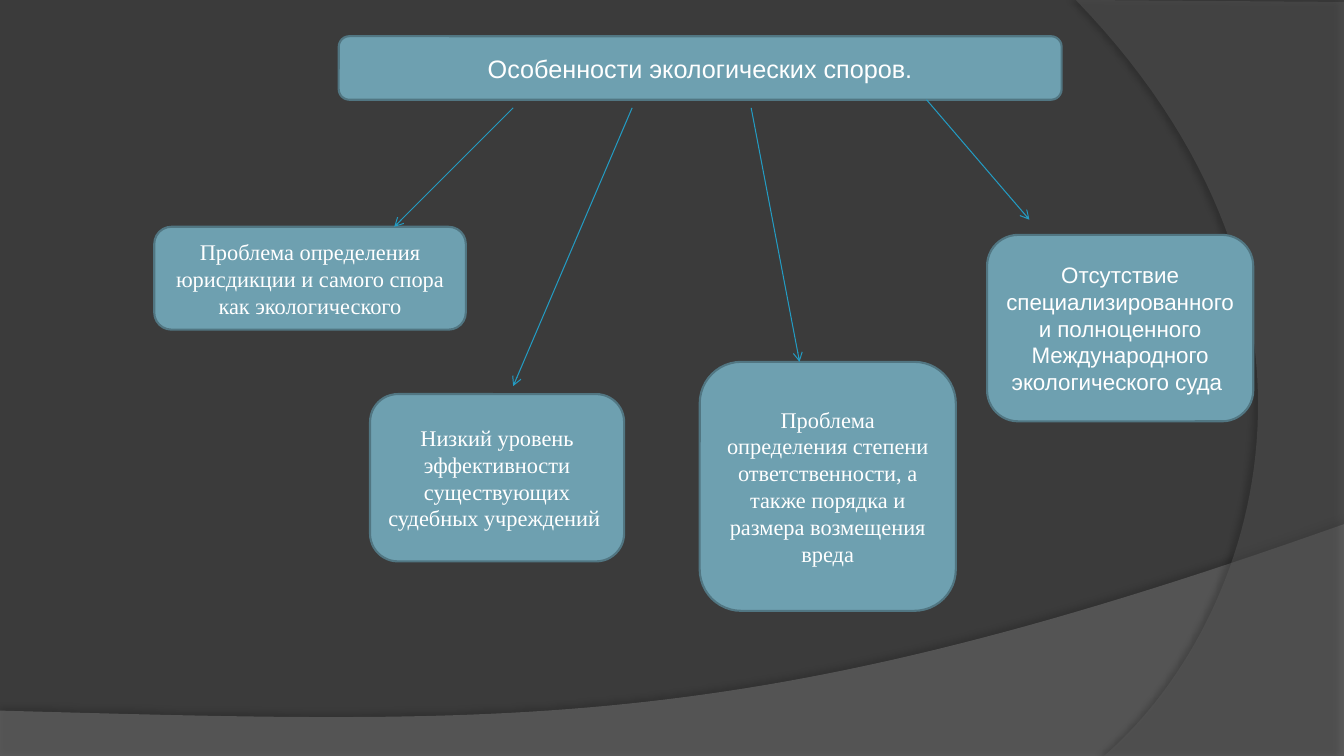
"""Build a slide on the features of environmental disputes."""
from dataclasses import dataclass

from lxml.etree import SubElement
from pptx import Presentation
from pptx.dml.color import RGBColor
from pptx.enum.shapes import MSO_CONNECTOR, MSO_SHAPE
from pptx.enum.text import MSO_ANCHOR, PP_ALIGN
from pptx.oxml.ns import qn
from pptx.util import Inches, Pt


@dataclass(frozen=True)
class Theme:
    background: str = "3B3B3B"
    wave: str = "7F7F7F"
    arc: str = "5E5E5E"
    shadow: str = "000000"
    box: str = "6EA0B0"
    border: str = "517682"
    arrow: str = "239BC2"
    text: str = "FFFFFF"
    sans: str = "Arial"
    serif: str = "Times New Roman"
    title_size: int = 18
    body_size: int = 16


def curve(p0, p1, p2, p3, steps=60):
    """Return points along a cubic Bezier curve."""
    points = []
    for i in range(steps + 1):
        t = i / steps
        u = 1 - t
        points.append(tuple(
            u**3 * a + 3 * u**2 * t * b + 3 * u * t**2 * c + t**3 * d
            for a, b, c, d in zip(p0, p1, p2, p3)
        ))
    return points


theme = Theme()
prs = Presentation()
prs.slide_width, prs.slide_height = Inches(13.33), Inches(7.5)
s = prs.slides.add_slide(prs.slide_layouts[6])
s.background.fill.solid()
s.background.fill.fore_color.rgb = RGBColor.from_string(theme.background)

wave = [(0, 7.05), (0, 7.51), (13.33, 7.51)]
wave += curve((13.33, 5.2), (7.45, 7.29), (5.21, 7.19), (0, 7.05))
arc = [(13.33, 0.02), (13.33, 7.5)]
arc += curve((10.95, 7.5), (12.46, 6.19), (13.57, 3), (10.67, 0))

for outline, color, opacity, shade, distance, angle in [
    (wave, theme.wave, 45, 35, 3.5, 270),
    (arc, theme.arc, 40, 45, 4, 180),
]:
    points = [(Inches(x), Inches(y)) for x, y in outline]
    builder = s.shapes.build_freeform(*points[0])
    builder.add_line_segments(points[1:], close=True)
    sp = builder.convert_to_shape()
    sp.fill.solid()
    sp.fill.fore_color.rgb = RGBColor.from_string(color)
    fill = sp.fill._xPr.find(qn("a:solidFill"))
    SubElement(fill[0], qn("a:alpha"), val=str(opacity * 1000))
    sp.line.fill.background()
    sp.shadow.inherit = False
    effects = sp._element.spPr.find(qn("a:effectLst"))
    shadow = SubElement(effects, qn("a:outerShdw"), blurRad=str(Pt(4)),
                        dist=str(Pt(distance)), dir=str(angle * 60000),
                        algn="ctr", rotWithShape="0")
    tint = SubElement(shadow, qn("a:srgbClr"), val=theme.shadow)
    SubElement(tint, qn("a:alpha"), val=str(shade * 1000))

boxes = [
    ((3.36, 0.36, 7.17, 0.63), theme.sans, theme.title_size,
     "Особенности экологических споров."),
    ((1.53, 2.25, 3.09, 1.02), theme.serif, theme.body_size,
     "Проблема определения юрисдикции и самого спора как экологического"),
    ((3.67, 3.91, 2.52, 1.66), theme.serif, theme.body_size,
     "Низкий уровень эффективности существующих судебных учреждений "),
    ((9.79, 2.33, 2.64, 1.85), theme.sans, theme.body_size,
     "Отсутствие специализированного и полноценного Международного "
     "экологического суда "),
    ((6.94, 3.59, 2.54, 2.47), theme.serif, theme.body_size,
     "Проблема определения степени ответственности, а также порядка "
     "и размера возмещения вреда"),
]
for place, font, size, text in boxes:
    sp = s.shapes.add_shape(MSO_SHAPE.ROUNDED_RECTANGLE, *map(Inches, place))
    sp.shadow.inherit = False
    sp.fill.solid()
    sp.fill.fore_color.rgb = RGBColor.from_string(theme.box)
    sp.line.color.rgb = RGBColor.from_string(theme.border)
    sp.line.width = Pt(1.5)
    tf = sp.text_frame
    tf.word_wrap = True
    tf.vertical_anchor = MSO_ANCHOR.MIDDLE
    p = tf.paragraphs[0]
    p.alignment = PP_ALIGN.CENTER
    r = p.add_run()
    r.text = text
    r.font.name = font
    r.font.size = Pt(size)
    r.font.color.rgb = RGBColor.from_string(theme.text)

arrows = [
    (5.09, 1.07, 3.91, 2.25),
    (6.27, 1.07, 5.09, 3.83),
    (9.19, 0.99, 10.21, 2.18),
    (7.45, 1.07, 7.93, 3.59),
]
for ends in arrows:
    arrow = s.shapes.add_connector(MSO_CONNECTOR.STRAIGHT, *map(Inches, ends))
    arrow.line.color.rgb = RGBColor.from_string(theme.arrow)
    arrow.line.width = Pt(0.75)
    SubElement(arrow.line._get_or_add_ln(), qn("a:tailEnd"), type="arrow")
    SubElement(arrow._element.spPr, qn("a:effectLst"))

prs.save("out.pptx")
